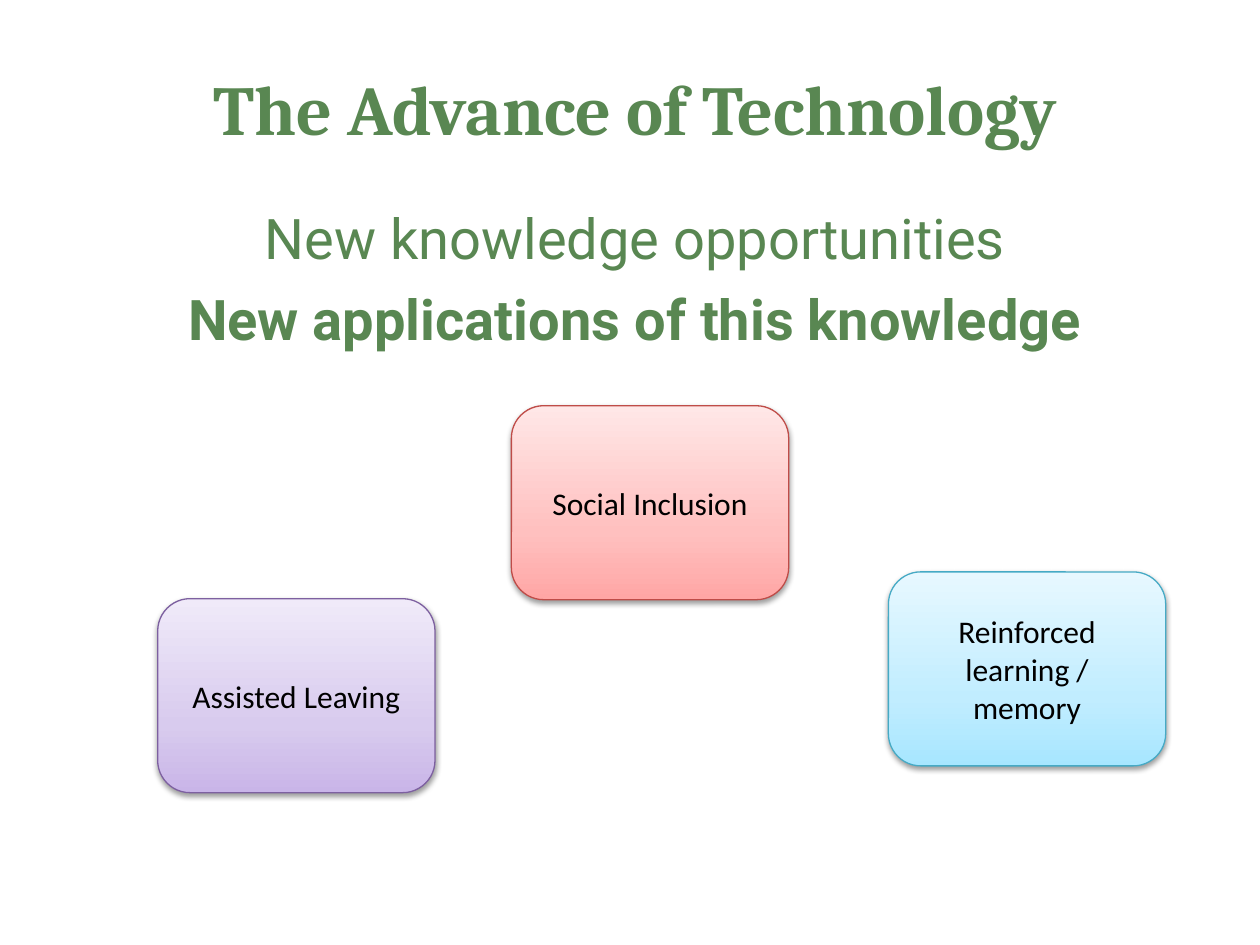
from copy import deepcopy

from lxml import etree
from pptx import Presentation
from pptx.dml.color import RGBColor
from pptx.enum import shapes, text
from pptx.oxml import ns
from pptx.util import Cm, Pt

COLOURS = {
    "heading": "598752",
    "label": "000000",
    "shadow": "000000",
    "purple": ("C9B5E8", "D8CBEE", "F0EAF9"),
    "purple line": "7D60A0",
    "red": ("FFA6A5", "FFC0BF", "FFE7E7"),
    "red line": "BF4C48",
    "blue": ("A7E6FF", "C1EDFF", "E7F8FF"),
    "blue line": "46AAC5",
}
STOP_POSITIONS = (0, 0.35, 1)
CARD_SIZE = (5.59, 3.91)
CARDS = [
    ("Assisted Leaving", "purple", 3.18, 12.07),
    ("Social Inclusion", "red", 10.31, 8.18),
    ("Reinforced learning / memory", "blue", 17.91, 11.53),
]


def add_span(para, words, font, size, colour, bold=False):
    """Add one centred run of text to a paragraph."""
    para.alignment = text.PP_ALIGN.CENTER
    span = para.add_run()
    span.text = words
    span.font.name = font
    span.font.size = Pt(size)
    span.font.bold = bold
    span.font.color.rgb = RGBColor.from_string(COLOURS[colour])


def add_frame(page, left, top, width, height):
    """Add a wrapping text box without margins and return its text frame."""
    box = page.shapes.add_textbox(Cm(left), Cm(top), Cm(width), Cm(height))
    frame = box.text_frame
    frame.word_wrap = True
    frame.margin_left = frame.margin_right = 0
    frame.margin_top = frame.margin_bottom = 0
    return frame


def add_title(page, left, top, width, height):
    """Place the slide title in the given box."""
    para = add_frame(page, left, top, width, height).paragraphs[0]
    para.line_spacing = Pt(48)
    add_span(para, "The Advance of Technology", "Cambria", 40, "heading", True)


def add_statements(page, left, top, width, height):
    """Place the two statements under the title."""
    frame = add_frame(page, left, top, width, height)
    add_span(frame.paragraphs[0], "New knowledge opportunities", "Roboto", 32, "heading")
    para = frame.add_paragraph()
    para.space_before = Pt(7.5)
    add_span(para, "New applications of this knowledge", "Roboto", 32, "heading", True)


def fill_gradient(card, colours):
    """Fill a card with a three-stop gradient rising from its base."""
    card.fill.gradient()
    card.fill.gradient_angle = 90
    first = card.element.spPr.find(".//" + ns.qn("a:gs"))
    first.addnext(deepcopy(first))
    for stop, colour, position in zip(card.fill.gradient_stops, colours, STOP_POSITIONS):
        stop.color.rgb = RGBColor.from_string(colour)
        stop.position = position


def add_shadow(card):
    """Give a card a soft shadow just below it."""
    card.shadow.inherit = False
    effects = card.element.spPr.find(ns.qn("a:effectLst"))
    shadow = etree.SubElement(
        effects, ns.qn("a:outerShdw"), blurRad=str(Pt(3.1)), dist=str(Pt(1.6)),
        dir="5400000", rotWithShape="0")
    colour = etree.SubElement(shadow, ns.qn("a:srgbClr"), val=COLOURS["shadow"])
    etree.SubElement(colour, ns.qn("a:alpha"), val="38000")


def add_card(page, label, tone, left, top, width, height):
    """Place one labelled application card in the given box."""
    card = page.shapes.add_shape(
        shapes.MSO_SHAPE.FLOWCHART_ALTERNATE_PROCESS,
        Cm(left), Cm(top), Cm(width), Cm(height))
    fill_gradient(card, COLOURS[tone])
    card.line.color.rgb = RGBColor.from_string(COLOURS[tone + " line"])
    card.line.width = Pt(0.75)
    add_shadow(card)
    frame = card.text_frame
    frame.word_wrap = True
    frame.vertical_anchor = text.MSO_ANCHOR.MIDDLE
    add_span(frame.paragraphs[0], label, "Calibri", 18, "label")


def main():
    """Build the slide and save the deck."""
    deck = Presentation()
    deck.slide_width, deck.slide_height = Cm(25.4), Cm(19.05)
    page = deck.slides.add_slide(deck.slide_layouts[6])
    add_title(page, 1.5, 1.32, 22.61, 2.21)
    add_statements(page, 1.3, 4.11, 23.01, 12.8)
    for label, tone, left, top in CARDS:
        add_card(page, label, tone, left, top, *CARD_SIZE)
    deck.save("out.pptx")


if __name__ == "__main__":
    main()
